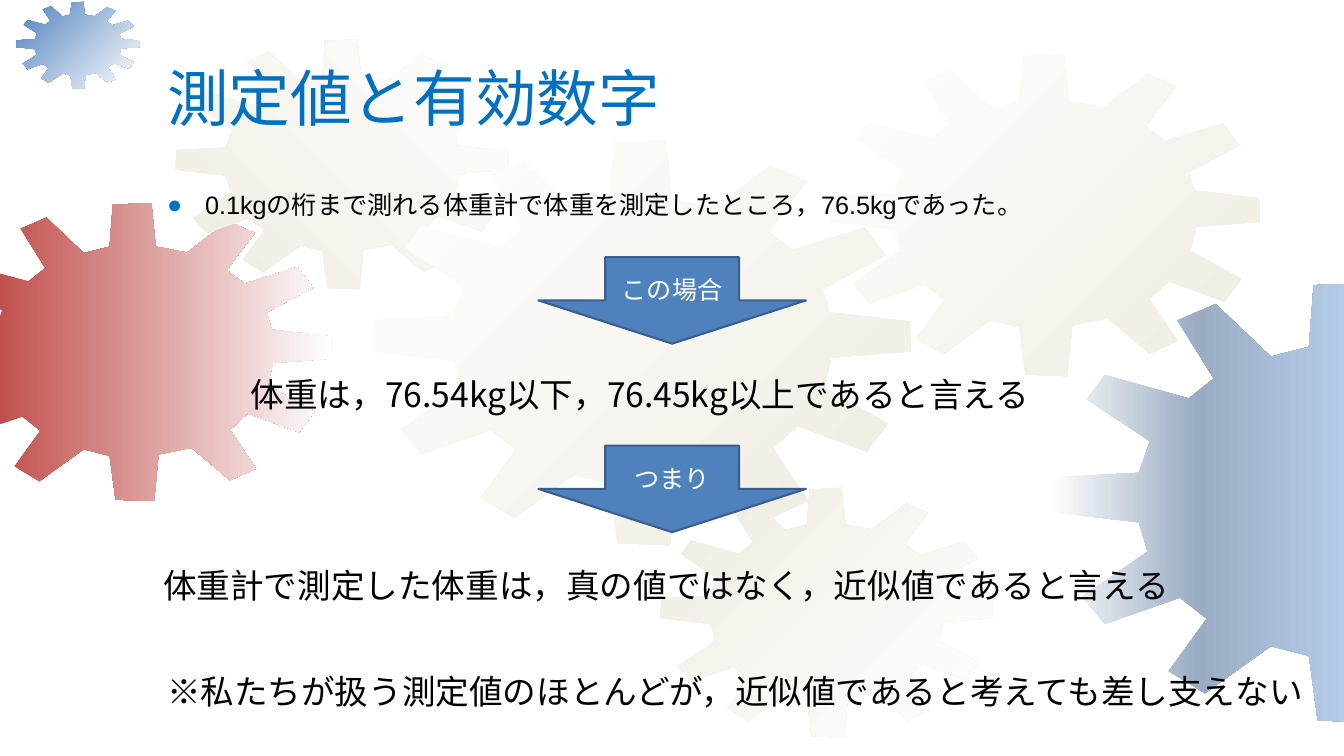
from copy import deepcopy

from pptx import Presentation
from pptx.dml.color import RGBColor
from pptx.enum import shapes, text
from pptx.oxml import parse_xml
from pptx.oxml.ns import nsdecls, qn
from pptx.util import Cm, Pt

# Gear outline in percent of its width and height
GEAR = [
    (63.6, 16.7), (55.7, 14.7), (54.6, 0), (44.9, 0.7), (44.1, 14.7), (37.6, 16.9),
    (28.2, 5), (21.7, 8.7), (27.9, 21.9), (23.6, 26.4), (9.3, 21.1), (6.2, 26.6),
    (17, 36.1), (15.1, 43.3), (0.4, 44.3), (0, 52.2), (15.1, 54.5), (16.6, 61.2),
    (5.4, 71.4), (9.3, 77.6), (22.1, 71.6), (26.7, 76.4), (20.2, 88.3), (26.4, 93.3),
    (37.6, 82.6), (44.1, 84.8), (45.6, 99.5), (55.3, 100), (56.4, 84.3), (64.7, 82.1),
    (74.4, 93), (80.9, 89.1), (74.4, 76.1), (78.9, 70.6), (91.8, 76.9), (95.7, 69.9),
    (83.9, 61.2), (85.2, 53.7), (100, 52.2), (99.8, 44.8), (84.9, 42.5), (83.6, 36.8),
    (95.3, 28.4), (91.4, 21.6), (78.1, 27.1), (73.6, 22.6), (80.6, 10.2), (74, 6.2),
]
LEFT_EDGE, RIGHT_EDGE = -0.05, 33.91
WHITE, CREAM, BLUE, ACCENT = "FFFFFF", "EEECE1", "4F81BD", "0070C0"
JAPANESE = "Noto Sans CJK JP"


def color(code):
    return RGBColor.from_string(code)


def clip(points, edge, side):
    """Keep the part of a polygon right (side 1) or left (side -1) of x = edge."""
    kept = []
    for (x0, y0), (x1, y1) in zip(points, points[1:] + points[:1]):
        inside, next_inside = (x0 - edge) * side >= 0, (x1 - edge) * side >= 0
        if inside:
            kept.append((x0, y0))
        if inside != next_inside:
            kept.append((edge, y0 + (y1 - y0) * (edge - x0) / (x1 - x0)))
    return kept


deck = Presentation()
deck.slide_width, deck.slide_height = Cm(33.87), Cm(19.05)
page = deck.slides.add_slide(deck.slide_layouts[1])

# Gears: left, top, width, height, clockwise angle, evenly spaced colours
gears = [
    (-1.65, 5.11, 10.01, 7.52, 0, ["C0504D", WHITE]),
    (0.41, 0.05, 3.1, 2.18, 45, [BLUE, WHITE]),
    (4.42, 0.99, 8.4, 6.3, 315, [CREAM, WHITE]),
    (9.37, 3.53, 13.59, 10.21, 45, [WHITE, CREAM]),
    (16.64, 12.29, 8.38, 6.3, 45, [CREAM, WHITE]),
    (20.9, 1.35, 10.85, 8.13, 45, [WHITE, CREAM]),
    (26.47, 7.11, 14.78, 11.1, 0, [WHITE, "99ACC3", "B5CCE8"]),
]
for left, top, width, height, angle, colors in gears:
    outline = [(left + x * width / 100, top + y * height / 100) for x, y in GEAR]
    outline = clip(clip(outline, LEFT_EDGE, 1), RIGHT_EDGE, -1)
    corners = [(Cm(x), Cm(y)) for x, y in outline]
    builder = page.shapes.build_freeform(*corners[0])
    builder.add_line_segments(corners[1:], close=True)
    gear = builder.convert_to_shape()
    gear.shadow.inherit = False
    gear.line.fill.background()
    gear.fill.gradient()
    gear.fill.gradient_angle = -angle % 360
    stop_list = gear.element.spPr.find(".//" + qn("a:gsLst"))
    for _ in colors[2:]:
        stop_list.append(deepcopy(stop_list[-1]))
    for index, stop in enumerate(gear.fill.gradient_stops):
        stop.position = index / (len(colors) - 1)
        stop.color.rgb = color(colors[index])

# Title and bulleted statement, in front of the gears
title, body = page.placeholders
for box, top, height, words, size, ink in [
    (title, 0.84, 3.18, "測定値と有効数字", 44, ACCENT),
    (body, 4.65, 11.43, "0.1kgの桁まで測れる体重計で体重を測定したところ，76.5kgであった。", 18, "000000"),
]:
    page.shapes.element.append(box.element)
    box.left, box.top, box.width, box.height = Cm(3.96), Cm(top), Cm(28.78), Cm(height)
    box.text_frame.text = words
    para = box.text_frame.paragraphs[0]
    para.alignment = text.PP_ALIGN.LEFT
    if box is body:
        properties = para._p.get_or_add_pPr()
        properties.append(parse_xml(f'<a:buClr {nsdecls("a")}><a:srgbClr val="{ACCENT}"/></a:buClr>'))
        properties.append(parse_xml(f'<a:buChar {nsdecls("a")} char="●"/>'))
    para.font.name, para.font.size = "Arial", Pt(size)
    para.font.color.rgb = color(ink)

# Arrows and the conclusions around them
captions = []
for top, words in [(6.48, "この場合"), (11.23, "つまり")]:
    arrow = page.shapes.add_shape(shapes.MSO_SHAPE.DOWN_ARROW, Cm(13.57), Cm(top), Cm(6.74), Cm(2.18))
    arrow.shadow.inherit = False
    arrow.fill.solid()
    arrow.fill.fore_color.rgb = color(BLUE)
    arrow.line.color.rgb = color("3A5F8C")
    arrow.line.width = Pt(1.5)
    arrow.text_frame.vertical_anchor = text.MSO_ANCHOR.MIDDLE
    captions.append((arrow, words, 18, WHITE, text.PP_ALIGN.CENTER))

for left, top, width, words in [
    (6.07, 9.3, 21.72, "体重は，76.54kg以下，76.45kg以上であると言える"),
    (3.86, 14.1, 26.16, "体重計で測定した体重は，真の値ではなく，近似値であると言える"),
    (3.96, 16.79, 29.59, "※私たちが扱う測定値のほとんどが，近似値であると考えても差し支えない"),
]:
    box = page.shapes.add_textbox(Cm(left), Cm(top), Cm(width), Cm(1.27))
    box.text_frame.word_wrap = False
    box.text_frame.auto_size = text.MSO_AUTO_SIZE.SHAPE_TO_FIT_TEXT
    captions.append((box, words, 24, "000000", text.PP_ALIGN.LEFT))

for box, words, size, ink, alignment in captions:
    box.text_frame.text = words
    para = box.text_frame.paragraphs[0]
    para.alignment = alignment
    para.font.name, para.font.size = JAPANESE, Pt(size)
    para.font.color.rgb = color(ink)
    latin = para._p.pPr.find(".//" + qn("a:latin"))
    latin.addnext(parse_xml(f'<a:ea {nsdecls("a")} typeface="{JAPANESE}"/>'))

deck.save("out.pptx")
